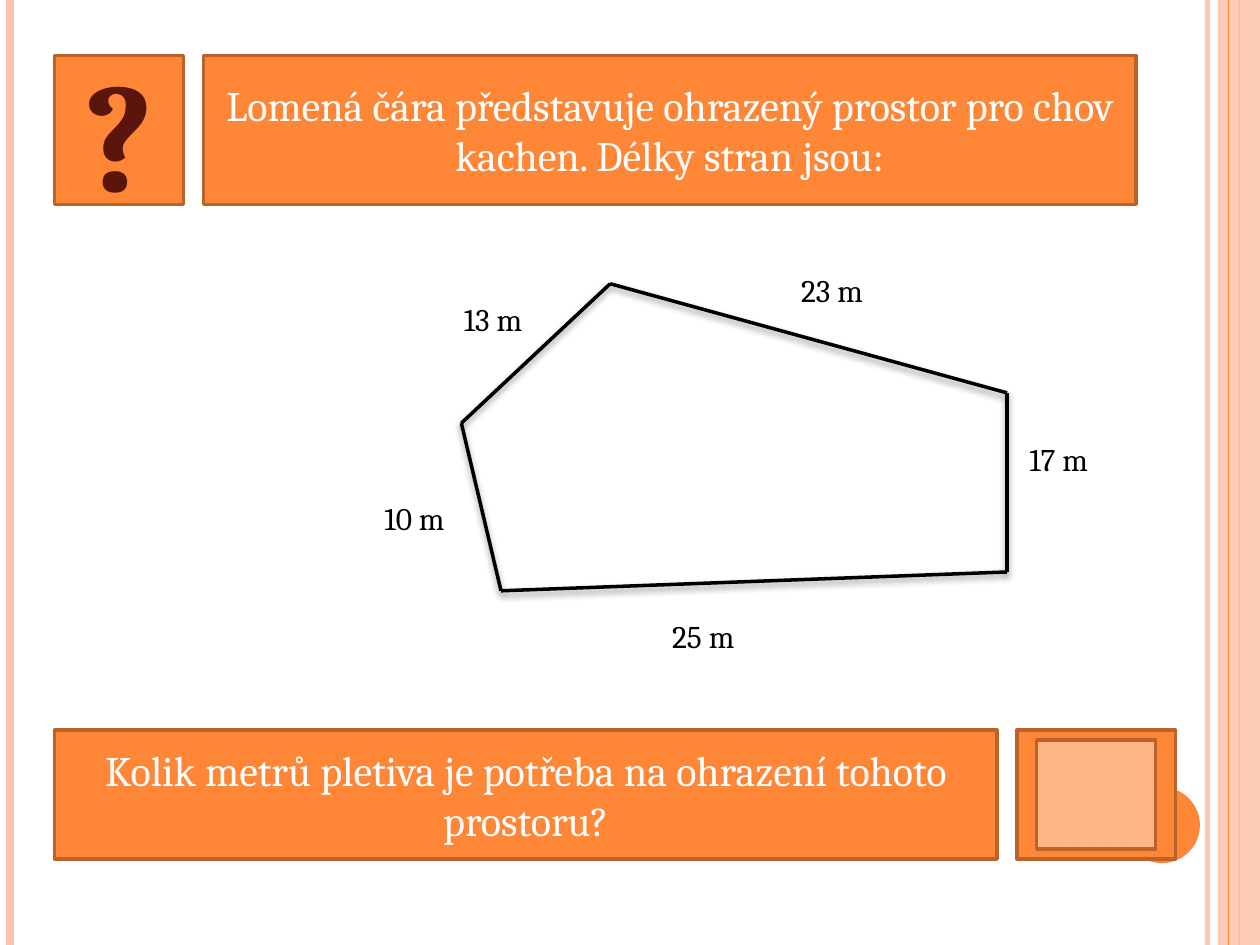
from dataclasses import dataclass

from lxml import etree
from pptx import Presentation
from pptx.dml.color import RGBColor
from pptx.enum.shapes import MSO_CONNECTOR, MSO_SHAPE
from pptx.enum.text import MSO_ANCHOR, MSO_AUTO_SIZE, PP_ALIGN
from pptx.oxml.ns import qn
from pptx.util import Cm, Pt

STRAIGHT = MSO_CONNECTOR.STRAIGHT
RECTANGLE, OVAL = MSO_SHAPE.RECTANGLE, MSO_SHAPE.OVAL
MIDDLE = MSO_ANCHOR.MIDDLE
NO_AUTOFIT, FIT_SHAPE = MSO_AUTO_SIZE.NONE, MSO_AUTO_SIZE.SHAPE_TO_FIT_TEXT
CENTER, LEFT = PP_ALIGN.CENTER, PP_ALIGN.LEFT
TITLE_ONLY = 5


@dataclass(frozen=True)
class Theme:
    font: str = "Cambria"
    orange: str = "FE8637"
    border: str = "BC6329"
    pale: str = "FEC3AE"
    answer: str = "FEB687"
    brown: str = "5A160B"
    black: str = "000000"
    white: str = "FFFFFF"
    mark_size: int = 88
    text_size: int = 24
    label_size: int = 18
    line_width: int = 2


THEME = Theme()
WIDTH, HEIGHT = 25.4, 19.05
SIDES = [
    ((3, 0), "23 m", (6.6, -0.39, 3.2)),
    ((11, 2.2), "17 m", (11.2, 3.02, 2.6)),
    ((11, 5.81), "25 m", (4, 6.6, 3.6)),
    ((0.8, 6.19), "10 m", (-1.8, 4.21, 2.2)),
    ((0, 2.81), "13 m", (-0.2, 0.2, 2.2)),
]


def color(value):
    return RGBColor.from_string(value)


def set_opacity(fill, percent):
    color_element = fill._xPr.find(qn("a:solidFill"))[0]
    etree.SubElement(color_element, qn("a:alpha"), val=str(percent * 1000))


def write(shape, text, size, text_color, alignment=CENTER, bold=False):
    frame = shape.text_frame
    frame.word_wrap = True
    frame.text = text
    paragraph = frame.paragraphs[0]
    paragraph.alignment = alignment
    paragraph.font.name = THEME.font
    paragraph.font.size = Pt(size)
    paragraph.font.bold = bold
    paragraph.font.color.rgb = color(text_color)


def paint(shape, fill, border=None):
    shape.fill.solid()
    shape.fill.fore_color.rgb = color(fill)
    if border:
        shape.line.color.rgb = color(border)
        shape.line.width = Pt(THEME.line_width)
    else:
        shape.line.fill.background()


def add_shape(slide, kind, box, fill, border=None):
    shape = slide.shapes.add_shape(kind, *map(Cm, box))
    shape.shadow.inherit = False
    paint(shape, fill, border)
    return shape


def add_line(slide, start, end, line_color, width):
    line = slide.shapes.add_connector(STRAIGHT, *map(Cm, (*start, *end)))
    line.line.color.rgb = color(line_color)
    line.line.width = Pt(width)
    effects = etree.SubElement(line._element.spPr, qn("a:effectLst"))
    return line, effects


def add_soft_shadow(effects):
    shadow = etree.SubElement(
        effects, qn("a:outerShdw"), blurRad=str(Pt(4)), dist=str(Pt(2)),
        dir="5400000", rotWithShape="0")
    shadow_color = etree.SubElement(shadow, qn("a:srgbClr"), val=THEME.black)
    etree.SubElement(shadow_color, qn("a:alpha"), val="40000")


def add_frame(slide, box):
    left, top, width, height = box
    right, bottom = left + width, top + height

    def stripe(x, line_color, thickness):
        return add_line(slide, (x, top), (x, bottom), line_color, thickness)[0]

    inner = stripe(right - 1.06, THEME.pale, 3)
    set_opacity(inner.line.fill, 93)
    stripe(left + 0.2, THEME.pale, 4.5)
    stripe(right - 0.42, THEME.orange, 1.5)
    band = add_shape(slide, RECTANGLE, (right - 0.85, top, 0.85, height), THEME.pale)
    set_opacity(band.fill, 87)
    stripe(right - 0.64, THEME.orange, 0.75)
    add_shape(slide, OVAL, (right - 2.74, bottom - 3.18, 1.53, 1.53), THEME.orange)


def add_heading(slide, box, text):
    left, top, width, height = box
    mark_width, gap = 2.6, 0.4
    mark = add_shape(slide, RECTANGLE, (left, top, mark_width, height),
                     THEME.orange, THEME.border)
    write(mark, "?", THEME.mark_size, THEME.brown, bold=True)
    mark.text_frame.vertical_anchor = MIDDLE

    title = slide.shapes.title
    offset = mark_width + gap
    title.left, title.top = Cm(left + offset), Cm(top)
    title.width, title.height = Cm(width - offset), Cm(height)
    paint(title, THEME.orange, THEME.border)
    write(title, text, THEME.text_size, THEME.white)
    title.text_frame.auto_size = NO_AUTOFIT
    title.text_frame.vertical_anchor = MIDDLE


def add_polygon(slide, origin, sides):
    left, top = origin
    corners = [(left + x, top + y) for (x, y), _, _ in sides]
    for start, end in zip(corners, corners[1:] + corners[:1]):
        _, effects = add_line(slide, start, end, THEME.black, THEME.line_width)
        add_soft_shadow(effects)
    for _, text, (x, y, width) in sides:
        label = slide.shapes.add_textbox(
            Cm(left + x), Cm(top + y), Cm(width), Cm(1.02))
        write(label, text, THEME.label_size, THEME.black, LEFT)
        label.text_frame.auto_size = FIT_SHAPE


def add_question(slide, box, text):
    left, top, width, height = box
    answer_width, gap = 3.2, 0.4
    question = add_shape(slide, RECTANGLE, (left, top, width - answer_width - gap, height),
                         THEME.orange, THEME.border)
    write(question, text, THEME.text_size, THEME.white)
    question.text_frame.vertical_anchor = MIDDLE
    answer_left = left + width - answer_width
    add_shape(slide, RECTANGLE, (answer_left, top, answer_width, height),
              THEME.orange, THEME.border)
    add_shape(slide, RECTANGLE,
              (answer_left + 0.4, top + 0.2, answer_width - 0.8, height - 0.4),
              THEME.answer, THEME.border)


def main():
    presentation = Presentation()
    presentation.slide_width, presentation.slide_height = Cm(WIDTH), Cm(HEIGHT)
    slide = presentation.slides.add_slide(presentation.slide_layouts[TITLE_ONLY])
    add_frame(slide, (0, 0, WIDTH, HEIGHT))
    add_heading(slide, (1.1, 1.12, 21.8, 3),
                "Lomená čára představuje ohrazený prostor pro chov kachen. Délky stran jsou:")
    add_polygon(slide, (9.3, 5.72), SIDES)
    add_question(slide, (1.1, 14.72, 22.6, 2.6),
                 "Kolik metrů pletiva je potřeba na ohrazení tohoto prostoru?")
    presentation.save("out.pptx")


if __name__ == "__main__":
    main()
